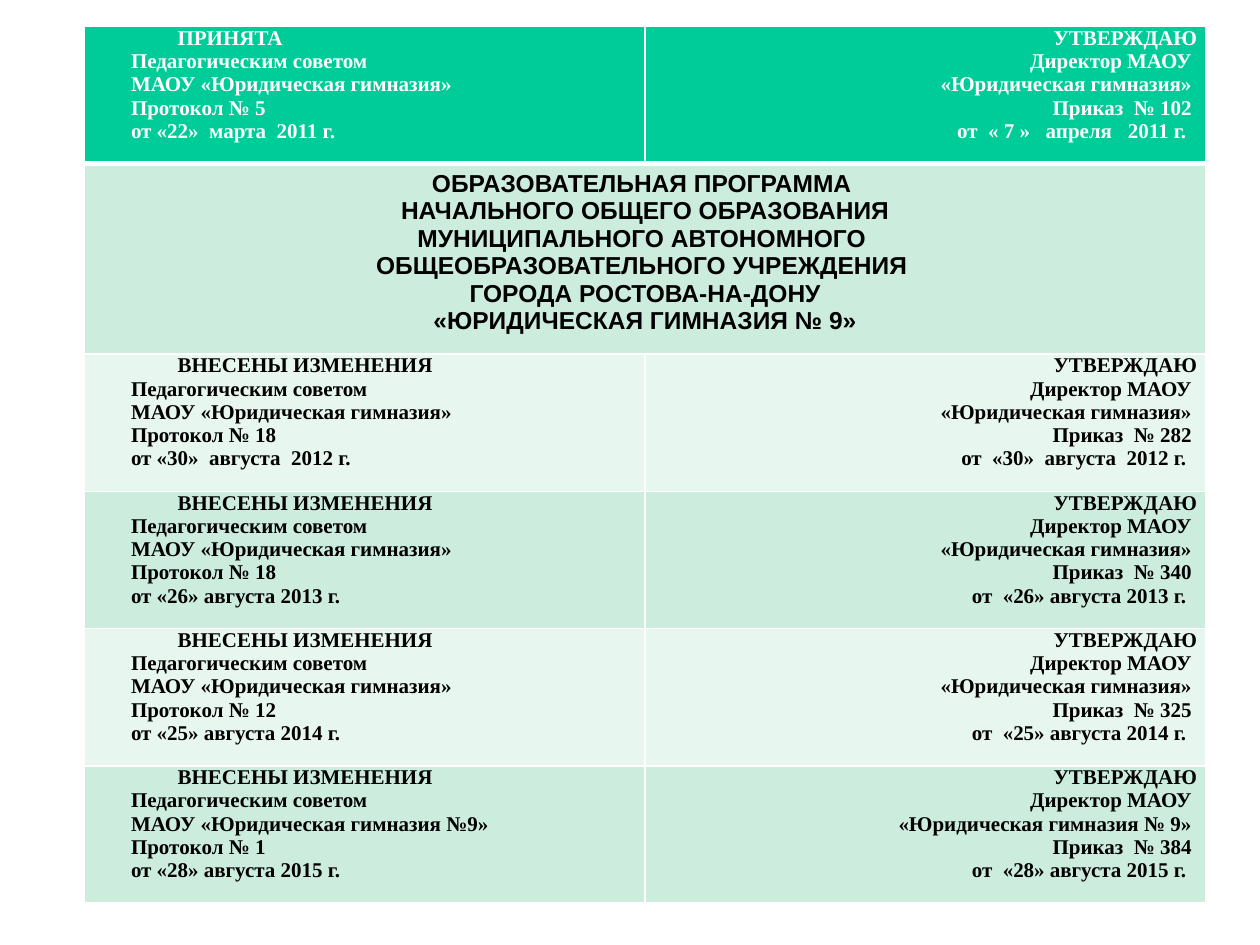
from lxml import etree
from pptx import Presentation
from pptx.dml.color import RGBColor
from pptx.enum import text
from pptx.oxml.ns import qn
from pptx.util import Inches, Pt

COLORS = {"header": "00CC99", "dark_band": "CCECDE", "light_band": "E7F6EF",
          "border": "FFFFFF", "header_text": "FFFFFF", "text": "000000"}
APPROVAL_FONT = {"name": "Times New Roman", "size": Pt(12), "bold": True}
TITLE_FONT = {"name": "Arial", "size": Pt(14), "bold": True}
ALIGN = text.PP_ALIGN

TITLE = ["ОБРАЗОВАТЕЛЬНАЯ ПРОГРАММА ",
         "НАЧАЛЬНОГО ОБЩЕГО ОБРАЗОВАНИЯ",
         "МУНИЦИПАЛЬНОГО АВТОНОМНОГО ",
         "ОБЩЕОБРАЗОВАТЕЛЬНОГО УЧРЕЖДЕНИЯ ",
         "ГОРОДА РОСТОВА-НА-ДОНУ",
         "«ЮРИДИЧЕСКАЯ ГИМНАЗИЯ № 9»"]
CHANGED = "ВНЕСЕНЫ ИЗМЕНЕНИЯ"
# table row: heading, school numbers, protocol, council date, order, director date
APPROVALS = {
    0: ("ПРИНЯТА", "", "", 5, "«22»  марта  2011 г.", 102, "« 7 »   апреля   2011 г."),
    2: (CHANGED, "", "", 18, "«30»  августа  2012 г.", 282, "«30»  августа  2012 г."),
    3: (CHANGED, "", "", 18, "«26» августа 2013 г.", 340, "«26» августа 2013 г."),
    4: (CHANGED, "", "", 12, "«25» августа 2014 г.", 325, "«25» августа 2014 г."),
    5: (CHANGED, " №9", " № 9", 1, "«28» августа 2015 г.", 384, "«28» августа 2015 г."),
}


def set_borders(cell, bottom):
    tc_pr = cell._tc.get_or_add_tcPr()
    widths = {"lnL": 1, "lnR": 1, "lnT": 1, "lnB": bottom}
    for i, (side, width) in enumerate(widths.items()):
        line = etree.Element(qn(f"a:{side}"), w=str(Pt(width)))
        fill = etree.SubElement(line, qn("a:solidFill"))
        etree.SubElement(fill, qn("a:srgbClr"), val=COLORS["border"])
        tc_pr.insert(i, line)


def indent(p, left, first):
    p_pr = p._p.get_or_add_pPr()
    p_pr.set("marL", str(Inches(left)))
    p_pr.set("indent", str(Inches(first)))


def write_lines(cell, lines, font, color, align, indents):
    tf = cell.text_frame
    for i, (line, (left, first)) in enumerate(zip(lines, indents)):
        p = tf.paragraphs[0] if i == 0 else tf.add_paragraph()
        p.alignment = align
        indent(p, left, first)
        r = p.add_run()
        r.text = line
        for name, value in font.items():
            setattr(r.font, name, value)
        r.font.color.rgb = RGBColor.from_string(COLORS[color])


def fill_approval(table, row, approval):
    """Write the council's adoption on the left and the director's approval on the right."""
    heading, council_no, director_no, protocol, adopted, order, approved = approval
    council = [heading, "Педагогическим советом",
               f"МАОУ «Юридическая гимназия{council_no}»",
               f"Протокол № {protocol}", f"от {adopted}"]
    director = ["УТВЕРЖДАЮ", "Директор МАОУ ",
                f"«Юридическая гимназия{director_no}» ",
                f"Приказ  № {order} ", f"от  {approved}  "]
    color = "header_text" if row == 0 else "text"
    sides = [(council, ALIGN.LEFT, [(0, 0.67)] + [(0.3, 0)] * 4),
             (director, ALIGN.RIGHT, [(0, 0)] + [(0.02, -0.02)] * 2 + [(0, 0)] * 2)]
    for col, (lines, align, indents) in enumerate(sides):
        cell = table.cell(row, col)
        cell.margin_left = cell.margin_right = Inches(0.07)
        cell.margin_top = cell.margin_bottom = 0
        write_lines(cell, lines, APPROVAL_FONT, color, align, indents)


def add_approval_table(s, left, top, width):
    heights = [1.09, 1.51] + [1.09] * 4
    table = s.shapes.add_table(len(heights), 2, left, top, width,
                               Inches(sum(heights))).table
    for col in table.columns:
        col.width = width // 2
    for i, height in enumerate(heights):
        table.rows[i].height = Inches(height)
        band = "header" if i == 0 else "dark_band" if i % 2 else "light_band"
        for cell in table.rows[i].cells:
            cell.fill.solid()
            cell.fill.fore_color.rgb = RGBColor.from_string(COLORS[band])
            set_borders(cell, bottom=3 if i == 0 else 1)

    table.cell(1, 0).merge(table.cell(1, 1))
    write_lines(table.cell(1, 0), TITLE, TITLE_FONT, "text", ALIGN.CENTER,
                [(0, 0)] * len(TITLE))
    for row, approval in APPROVALS.items():
        fill_approval(table, row, approval)


def main():
    prs = Presentation()
    prs.slide_width, prs.slide_height = Inches(10), Inches(7.5)
    s = prs.slides.add_slide(prs.slide_layouts[6])
    add_approval_table(s, Inches(0.67), Inches(0.21), Inches(8.9))
    prs.save("out.pptx")


if __name__ == "__main__":
    main()
